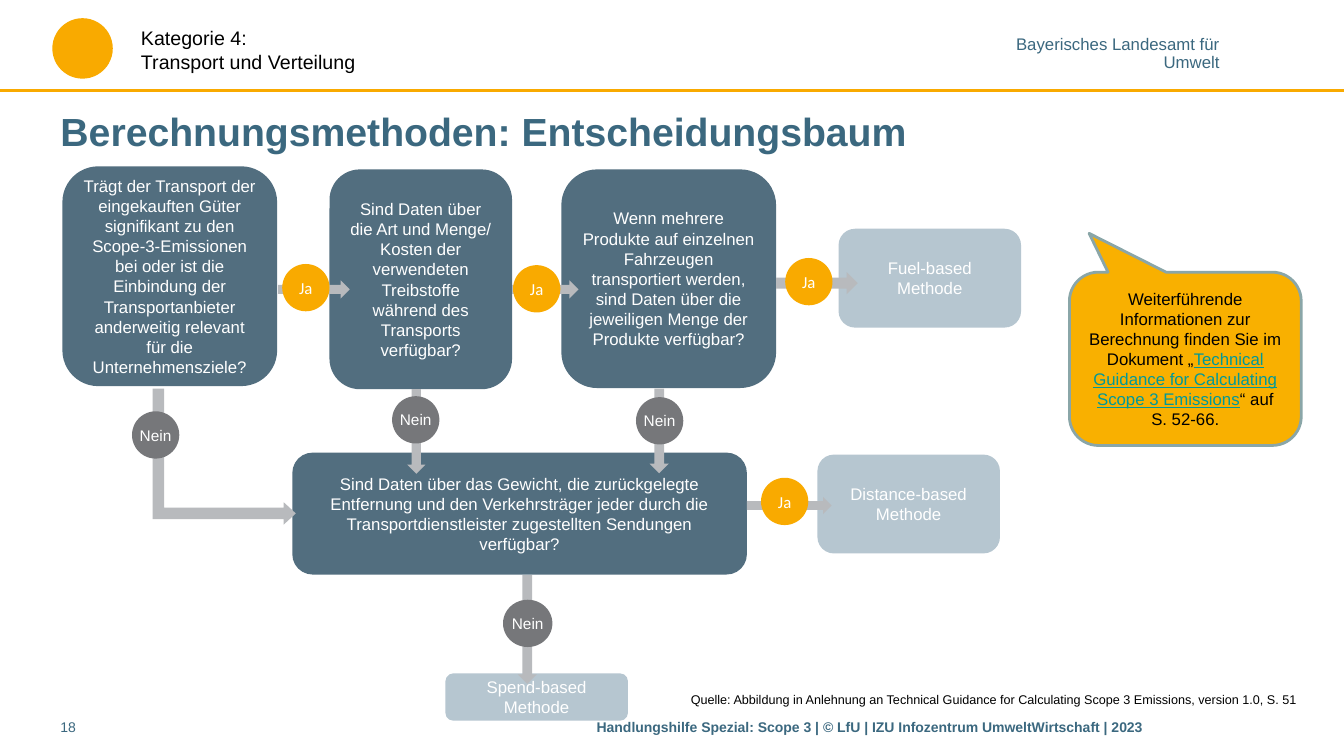
from dataclasses import dataclass

from lxml import etree
from pptx import Presentation
from pptx.dml.color import RGBColor
from pptx.enum.shapes import MSO_CONNECTOR, MSO_SHAPE
from pptx.enum.text import MSO_ANCHOR, MSO_AUTO_SIZE, PP_ALIGN
from pptx.oxml.ns import qn
from pptx.shapes.autoshape import Shape
from pptx.slide import Slide
from pptx.util import Pt

STRAIGHT = MSO_CONNECTOR.STRAIGHT
ROUNDED, ELLIPSE = MSO_SHAPE.ROUNDED_RECTANGLE, MSO_SHAPE.OVAL
RIGHT_ARROW, BENT_ARROW = MSO_SHAPE.RIGHT_ARROW, MSO_SHAPE.BENT_UP_ARROW
CALLOUT = MSO_SHAPE.ROUNDED_RECTANGULAR_CALLOUT
TOP, MIDDLE = MSO_ANCHOR.TOP, MSO_ANCHOR.MIDDLE
LEFT, CENTER, RIGHT = PP_ALIGN.LEFT, PP_ALIGN.CENTER, PP_ALIGN.RIGHT
FIT_SHAPE, NO_FIT = MSO_AUTO_SIZE.SHAPE_TO_FIT_TEXT, MSO_AUTO_SIZE.NONE


@dataclass(frozen=True)
class Theme:
    font: str = "Arial"
    yes_font: str = "Calibri"
    title_size: float = 28
    category_size: float = 14
    body_size: float = 12
    no_size: float = 11
    footer_size: float = 10
    source_size: float = 9
    blue: str = "3B687F"
    question: str = "526E7F"
    method: str = "B6C6D0"
    arrow: str = "B8BABD"
    yes: str = "F9AA00"
    no: str = "76777A"
    callout: str = "F9B000"
    callout_line: str = "8AA6A8"
    link: str = "009999"
    white: str = "FFFFFF"
    black: str = "000000"


THEME = Theme()
BADGE_SIZE = 33.8
METHOD_WIDTH = 130.4


@dataclass(frozen=True)
class Area:
    left: float
    top: float
    width: float
    height: float


@dataclass(frozen=True)
class Node:
    area: Area
    text: str
    color: str


@dataclass(frozen=True)
class Arrow:
    area: Area
    rotation: float = 0


@dataclass(frozen=True)
class Badge:
    left: float
    top: float
    is_yes: bool
    width: float = BADGE_SIZE


@dataclass(frozen=True)
class Label:
    area: Area
    lines: tuple[str, ...]
    size: float
    color: str = THEME.blue
    bold: bool = False
    align: PP_ALIGN = LEFT
    anchor: MSO_ANCHOR = TOP
    side_inset: float = 0
    end_inset: float = 3.6
    spacing: float = 1.0
    wrap: bool = True
    grow: bool = False


NODES = (
    Node(Area(44.6, 118.8, 153.4, 157),
         "Trägt der Transport der eingekauften Güter signifikant zu den Scope-3-Emissionen "
         "bei oder ist die Einbindung der Transportanbieter anderweitig relevant für die "
         "Unternehmensziele?", THEME.question),
    Node(Area(235.4, 121, METHOD_WIDTH, 157),
         "Sind Daten über die Art und Menge/ Kosten der verwendeten Treibstoffe während "
         "des Transports verfügbar?", THEME.question),
    Node(Area(401, 121, 153.4, 156.2),
         "Wenn mehrere Produkte auf einzelnen Fahrzeugen transportiert werden, sind Daten "
         "über die jeweiligen Menge der Produkte verfügbar?", THEME.question),
    Node(Area(208.8, 323.3, 324.7, 87.1),
         "Sind Daten über das Gewicht, die zurückgelegte Entfernung und den Verkehrsträger "
         "jeder durch die Transportdienstleister zugestellten Sendungen verfügbar?",
         THEME.question),
    Node(Area(599, 163.4, METHOD_WIDTH, 70.6), "Fuel-based Methode", THEME.method),
    Node(Area(583.9, 324.7, METHOD_WIDTH, 70.6), "Distance-based Methode", THEME.method),
    Node(Area(318.2, 481, METHOD_WIDTH, 33.8), "Spend-based Methode", THEME.method),
)
ARROWS = (
    Arrow(Area(198.7, 200.2, 51.1, 13)),
    Arrow(Area(365.8, 200.2, 47.5, 13)),
    Arrow(Area(554.4, 194.4, 58.3, 15.8)),
    Arrow(Area(533.5, 355, 60.5, 12.2)),
    Arrow(Area(440.6, 301, 60.5, 13.7), 90),
    Arrow(Area(267.1, 301.7, 60.5, 13), 90),
    Arrow(Area(337.7, 442.8, 77.8, 13.7), 90),
)
BADGES = (
    Badge(201.6, 188.6, True),
    Badge(366.5, 189.4, True),
    Badge(560.9, 184.3, True),
    Badge(543.6, 341.3, True),
    Badge(359.3, 428.4, False, 35.3),
    Badge(280.1, 283, False),
    Badge(454.3, 283.7, False),
    Badge(94.3, 293.8, False),
)
LABELS = (
    Label(Area(725, 26.6, 146.2, 24.5), ("Bayerisches Landesamt für", "Umwelt"),
          THEME.body_size, align=RIGHT, end_inset=0, spacing=0.85, wrap=False, grow=True),
    Label(Area(93.6, 15.1, 306, 41), ("Kategorie 4:", "Transport und Verteilung"),
          THEME.category_size, THEME.black, side_inset=7.2, grow=True),
    Label(Area(43.2, 73.4, 886.3, 39.6), ("Berechnungsmethoden: Entscheidungsbaum",),
          THEME.title_size, bold=True, anchor=MIDDLE),
    Label(Area(426.2, 509.8, 503.3, 22.3),
          ("Handlungshilfe Spezial: Scope 3 | © LfU | IZU Infozentrum UmweltWirtschaft | 2023",),
          THEME.footer_size, bold=True),
    Label(Area(43.2, 509.8, 50.4, 22.3), ("18",), THEME.footer_size),
    Label(Area(478.1, 490.3, 455, 18),
          ("Quelle: Abbildung in Anlehnung an Technical Guidance for Calculating "
           "Scope 3 Emissions, version 1.0, S. 51",),
          THEME.source_size, THEME.black, align=RIGHT, side_inset=7.2, grow=True),
)


def rgb(color: str) -> RGBColor:
    return RGBColor.from_string(color)


def lengths(area: Area) -> tuple[Pt, Pt, Pt, Pt]:
    return Pt(area.left), Pt(area.top), Pt(area.width), Pt(area.height)


def add_filled(page: Slide, kind: MSO_SHAPE, area: Area, color: str) -> Shape:
    shape = page.shapes.add_shape(kind, *lengths(area))
    shape.shadow.inherit = False
    shape.fill.solid()
    shape.fill.fore_color.rgb = rgb(color)
    shape.line.fill.background()
    return shape


def write_centered(shape: Shape, spans: tuple[str, ...], size: float, color: str,
                   font: str = THEME.font) -> None:
    frame = shape.text_frame
    frame.word_wrap = True
    frame.vertical_anchor = MIDDLE
    para = frame.paragraphs[0]
    para.alignment = CENTER
    for text in spans:
        para.add_run().text = text
    para.font.name, para.font.size, para.font.color.rgb = font, Pt(size), rgb(color)


def add_label(page: Slide, label: Label) -> None:
    frame = page.shapes.add_textbox(*lengths(label.area)).text_frame
    frame.word_wrap = label.wrap
    frame.auto_size = FIT_SHAPE if label.grow else NO_FIT
    frame.vertical_anchor = label.anchor
    frame.margin_left = frame.margin_right = Pt(label.side_inset)
    frame.margin_top = frame.margin_bottom = Pt(label.end_inset)
    for index, line in enumerate(label.lines):
        para = frame.add_paragraph() if index else frame.paragraphs[0]
        para.text, para.alignment, para.line_spacing = line, label.align, label.spacing
        para.font.name, para.font.size = THEME.font, Pt(label.size)
        para.font.bold, para.font.color.rgb = label.bold, rgb(label.color)


def add_badge(page: Slide, badge: Badge) -> None:
    area = Area(badge.left, badge.top, badge.width, BADGE_SIZE)
    circle = add_filled(page, ELLIPSE, area, THEME.yes if badge.is_yes else THEME.no)
    frame = circle.text_frame
    frame.margin_left = frame.margin_right = frame.margin_top = frame.margin_bottom = Pt(0)
    if badge.is_yes:
        write_centered(circle, ("Ja",), THEME.body_size, THEME.white, THEME.yes_font)
    else:
        write_centered(circle, ("Nein",), THEME.no_size, THEME.white)


def add_header(page: Slide) -> None:
    rule = page.shapes.add_connector(STRAIGHT, Pt(0), Pt(64.8), Pt(960), Pt(64.8))
    rule.line.color.rgb, rule.line.width = rgb(THEME.yes), Pt(2)
    etree.SubElement(rule.line._get_or_add_ln().getparent(), qn("a:effectLst"))
    add_filled(page, ELLIPSE, Area(37.4, 13, 43.2, 43.2), THEME.yes)


def add_callout(page: Slide) -> None:
    bubble = add_filled(page, CALLOUT, Area(763.9, 194.4, 165.6, 123.8), THEME.callout)
    for index, value in enumerate((-0.415, -0.724, 0.167)):
        bubble.adjustments[index] = value
    bubble.line.color.rgb, bubble.line.width = rgb(THEME.callout_line), Pt(2)
    write_centered(bubble, (
        "Weiterführende Informationen zur Berechnung finden Sie im Dokument „",
        "Technical Guidance for Calculating Scope 3 Emissions",
        "“ auf S. 52-66."), THEME.body_size, THEME.black)
    document = bubble.text_frame.paragraphs[0].runs[1]
    document.font.color.rgb, document.font.underline = rgb(THEME.link), True


def add_decision_tree(page: Slide) -> None:
    for node in NODES:
        box = add_filled(page, ROUNDED, node.area, node.color)
        write_centered(box, (node.text,), THEME.body_size, THEME.white)
    for arrow in ARROWS:
        add_filled(page, RIGHT_ARROW, arrow.area, THEME.arrow).rotation = arrow.rotation
    bent = add_filled(page, BENT_ARROW, Area(111.6, 275, 97.2, 102.2), THEME.arrow)
    bent.rotation = 90
    for index, value in enumerate((0.084, 0.082, 0.089)):
        bent.adjustments[index] = value
    for badge in BADGES:
        add_badge(page, badge)


def main() -> None:
    deck = Presentation()
    deck.slide_width, deck.slide_height = Pt(960), Pt(540)
    page = deck.slides.add_slide(deck.slide_layouts[6])
    add_header(page)
    for label in LABELS:
        add_label(page, label)
    add_decision_tree(page)
    add_callout(page)
    deck.save("out.pptx")


if __name__ == "__main__":
    main()
